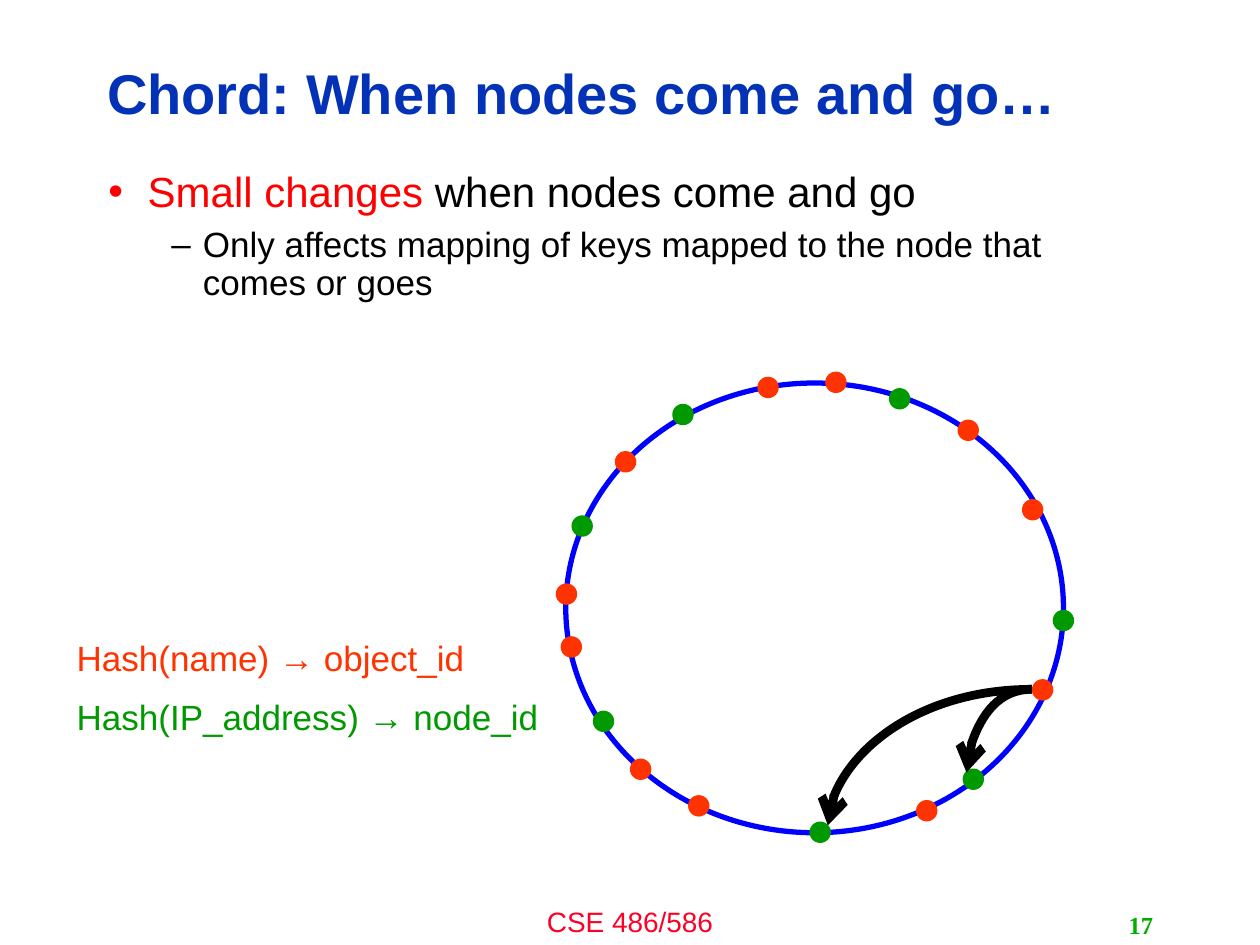
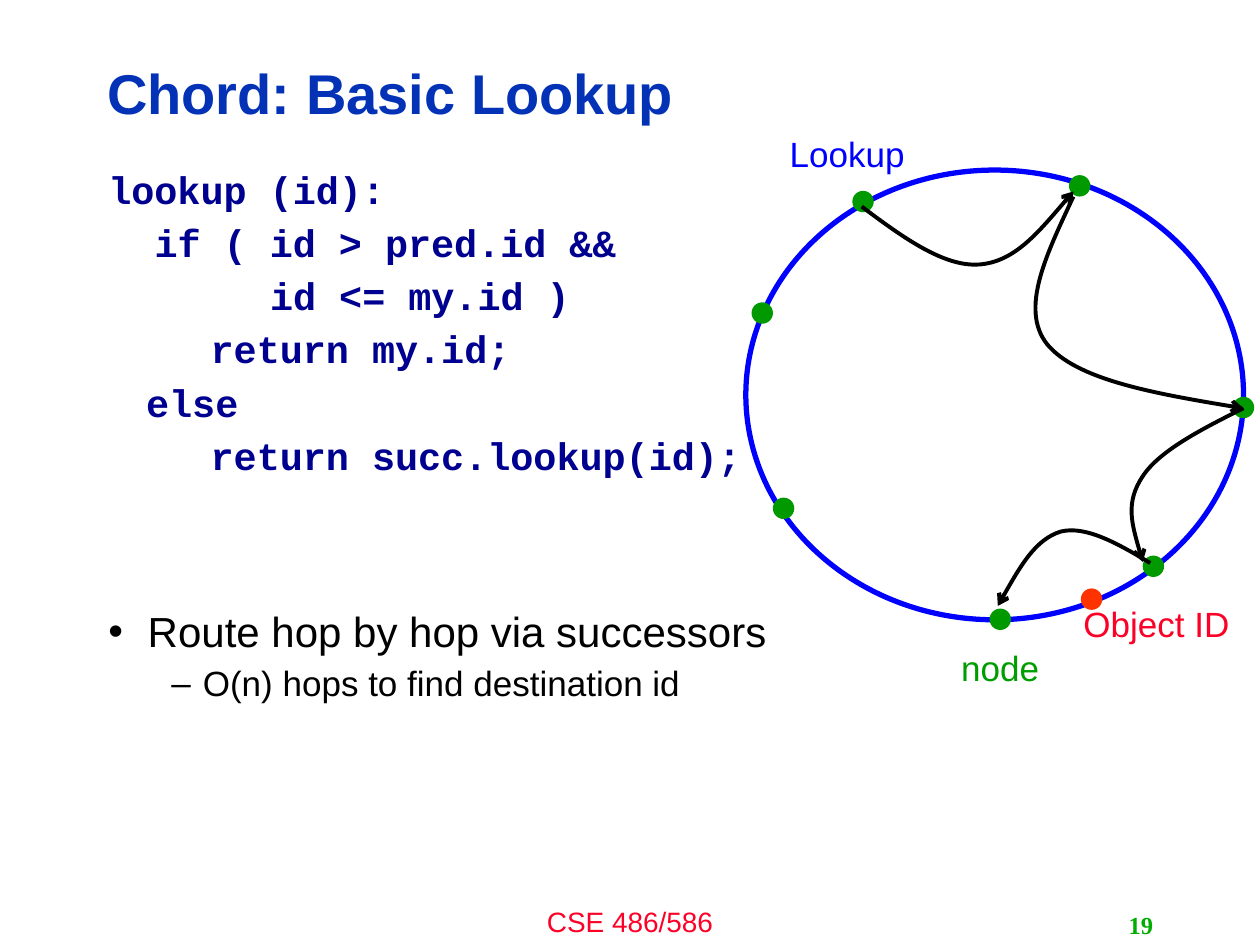
from dataclasses import dataclass

from lxml import etree
from pptx import Presentation, util as u
from pptx.dml.color import RGBColor
from pptx.enum import shapes, text
from pptx.oxml.ns import qn


@dataclass(frozen=True)
class Theme:
    sans: str = "Arial"
    mono: str = "Courier New"
    serif: str = "Times New Roman"
    title: str = "0332B7"
    ink: str = "000000"
    accent: str = "FF0000"
    code: str = "000090"
    course: str = "FC0128"
    number: str = "00AE00"
    ring: str = "0000FF"
    object: str = "FF3300"
    node: str = "009900"
    node_label: str = "009D00"
    title_size: int = 32
    point_size: int = 24
    code_size: int = 22
    label_size: int = 20
    course_size: int = 16
    number_size: int = 14


THEME = Theme()
ALIGN = text.PP_ALIGN
TITLE_BOX = (54, 26, 574.5, 58)
BODY_BOX = (54.7, 94.3, 605, 388)
FOOTER_BOX = (240, 513.4, 240, 26.6)
NUMBER_BOX = (516.2, 517, 149.8, 23)
RING_SIZE = (284.4, 257)
DOT = 12.24
CODE_CHAR = 13.2

NODES = [(284.4, 135.7), (9.4, 81.7), (232.9, 226.4), (67, 18),
         (21.6, 193.3), (145.4, 256.7), (190.8, 9)]
OBJECTS = [(230, 27), (206.3, 244.4), (76, 241.6), (266.8, 72.4),
           (272.5, 175.3), (154.4, -0.4), (115.6, 2.5), (34.2, 45),
           (0.4, 120.6), (3.2, 150.8), (42.8, 220.7)]
LOOKED_UP = (197.6, 245.2)

REMAP_START = (266.4, 175)
REMAP_ENDS = [(229, 222.5), (149.8, 252.7)]

HOPS = [
    [(226.8, 223.9), (221.8, 206.6), (216.7, 190.1), (226.8, 175),
     (236.2, 160.6), (259.9, 148.3), (284.4, 136.1)],
    [(284.4, 136.1), (236.2, 128.2), (188.6, 119.5), (172.1, 99.4),
     (156.2, 79.2), (172.1, 47.5), (187.2, 15.1)],
    [(187.2, 12.2), (169.9, 32.4), (153.4, 52.6), (133.2, 54),
     (113, 55.4), (89.3, 38.2), (66.2, 20.9)],
    [(144, 249.1), (154.8, 229.7), (165.6, 211), (180, 206.6),
     (194.4, 203), (213.1, 213.8), (231.1, 224.6)],
]

CODE = [
    ("lookup (id):", 0),
    ("if ( id > pred.id &&", 2 * CODE_CHAR),
    ("id <= my.id )", 7 * CODE_CHAR),
    ("return my.id;", 58.5),
    ("else", 21.6),
    ("return succ.lookup(id);", 58.5),
]


def points(*lengths):
    return [u.Pt(length) for length in lengths]


def rgb(color):
    return RGBColor.from_string(color)


def write(frame, content, *, size, color=THEME.ink, font=THEME.sans, bold=False,
          align=ALIGN.LEFT, spacing=None, before=0, gap=None, level=0,
          margin=0, indent=0, bullet=None):
    paragraph = frame.paragraphs[0] if not frame.text else frame.add_paragraph()
    paragraph.alignment = align
    paragraph.level = level
    paragraph.line_spacing = spacing
    paragraph.space_before = u.Pt(gap or 0)
    properties = paragraph._p.get_or_add_pPr()
    if before and gap is None:
        space = properties.find(qn("a:spcBef"))
        space.remove(space[0])
        etree.SubElement(space, qn("a:spcPct"), val=str(before * 1000))
    properties.set("marL", str(u.Pt(margin)))
    properties.set("indent", str(u.Pt(indent)))
    if bullet:
        etree.SubElement(properties, qn("a:buChar"), char=bullet)
    else:
        etree.SubElement(properties, qn("a:buNone"))
    parts = [(content, color)] if isinstance(content, str) else content
    for words, tint in parts:
        run = paragraph.add_run()
        run.text = words
        run.font.name = font
        run.font.size = u.Pt(size)
        run.font.bold = bold
        run.font.color.rgb = rgb(tint)


def place(holder, box, anchor):
    holder.left, holder.top, holder.width, holder.height = points(*box)
    frame = holder.text_frame
    frame.word_wrap = True
    frame.auto_size = text.MSO_AUTO_SIZE.NONE
    frame.vertical_anchor = anchor
    return frame


def text_area(slide, box, wrap=False, anchor=text.MSO_ANCHOR.TOP):
    frame = place(slide.shapes.add_textbox(*points(*box)), box, anchor)
    frame.word_wrap = wrap
    return frame


def label(slide, box, words, color):
    write(text_area(slide, box), words, size=THEME.label_size, color=color, before=50)


def write_point(frame, content, gap=None):
    write(frame, content, size=THEME.point_size, spacing=0.9, before=30, gap=gap,
          margin=22.5, indent=-22.5, bullet="•")


def write_detail(frame, content):
    write(frame, content, size=THEME.label_size, spacing=0.9, before=30, level=1,
          margin=54, indent=-18, bullet="–")


def start_slide(deck, heading, number):
    slide = deck.slides.add_slide(deck.slide_layouts[1])
    write(text_area(slide, FOOTER_BOX, wrap=True), "CSE 486/586",
          size=THEME.course_size, color=THEME.course, align=ALIGN.CENTER, before=50)
    title = place(slide.shapes.title, TITLE_BOX, text.MSO_ANCHOR.MIDDLE)
    write(title, heading, size=THEME.title_size, color=THEME.title, bold=True, spacing=0.9)
    write(text_area(slide, NUMBER_BOX, wrap=True, anchor=text.MSO_ANCHOR.MIDDLE), number,
          size=THEME.number_size, color=THEME.number, font=THEME.serif, bold=True,
          align=ALIGN.RIGHT)
    return slide, place(slide.placeholders[1], BODY_BOX, text.MSO_ANCHOR.TOP)


def ellipse(slide, box, fill=None, outline=None):
    oval = slide.shapes.add_shape(shapes.MSO_SHAPE.OVAL, *points(*box))
    oval.shadow.inherit = False
    if fill:
        oval.fill.solid()
        oval.fill.fore_color.rgb = rgb(fill)
    else:
        oval.fill.background()
    if outline:
        oval.line.color.rgb = rgb(outline)
        oval.line.width = u.Pt(3)
    else:
        oval.line.fill.background()


def draw_ring(slide, box, objects):
    left, top = box[:2]
    ellipse(slide, box, outline=THEME.ring)
    for centers, color in ((objects, THEME.object), (NODES, THEME.node)):
        for x, y in centers:
            ellipse(slide, (left + x - DOT / 2, top + y - DOT / 2, DOT, DOT), fill=color)


def style_arrow(arrow, width, end):
    arrow.line.color.rgb = rgb(THEME.ink)
    arrow.line.width = u.Pt(width)
    etree.SubElement(arrow.line._get_or_add_ln(), qn(end), type="arrow")


def draw_remaps(slide, box):
    left, top = box[:2]
    start_x, start_y = REMAP_START
    for x, y in REMAP_ENDS:
        remap = slide.shapes.add_connector(
            shapes.MSO_CONNECTOR.CURVE,
            *points(left + start_x, top + start_y, left + x, top + y))
        remap._element.spPr.find(qn("a:prstGeom")).set("prst", "curvedConnector2")
        style_arrow(remap, 5, "a:tailEnd")
        etree.SubElement(remap._element.spPr, qn("a:effectLst"))


def draw_hops(slide, box):
    left, top = box[:2]
    for hop in HOPS:
        start, *rest = [points(left + x, top + y) for x, y in hop]
        builder = slide.shapes.build_freeform(*start)
        builder.add_line_segments(rest, close=False)
        curve = builder.convert_to_shape()
        segments = curve._element.xpath(".//a:lnTo")
        for first in range(0, len(segments), 3):
            bend = etree.SubElement(segments[first].getparent(), qn("a:cubicBezTo"))
            for segment in segments[first:first + 3]:
                bend.append(segment[0])
                segment.getparent().remove(segment)
        curve.fill.background()
        curve.shadow.inherit = False
        style_arrow(curve, 2.25, "a:headEnd")


def build_churn_slide(deck):
    slide, body = start_slide(deck, "Chord: When nodes come and go…", "17")
    write_point(body, [("Small changes", THEME.accent),
                       (" when nodes come and go", THEME.ink)])
    write_detail(body, "Only affects mapping of keys mapped to the node that comes or goes")
    ring_box = (323.3, 218.9, *RING_SIZE)
    draw_ring(slide, ring_box, OBJECTS)
    hashes = text_area(slide, (36.7, 360, 280, 67.7))
    for rule, color in (("Hash(name) → object_id", THEME.object),
                        ("Hash(IP_address) → node_id", THEME.node)):
        write(hashes, rule, size=THEME.label_size, color=color, before=50)
    draw_remaps(slide, ring_box)


def build_lookup_slide(deck):
    slide, body = start_slide(deck, "Chord: Basic Lookup", "19")
    for line, margin in CODE:
        write(body, line, size=THEME.code_size, color=THEME.code, font=THEME.mono,
              bold=True, spacing=0.9, before=30, margin=margin)
    write_point(body, "Route hop by hop via successors", gap=75.6)
    write_detail(body, "O(n) hops to find destination id")
    ring_box = (426.2, 97.2, *RING_SIZE)
    draw_ring(slide, ring_box, [LOOKED_UP])
    draw_hops(slide, ring_box)
    left, top = ring_box[:2]
    label(slide, (left + 116, top + 268.6, 59.8, 31.7), "node", THEME.node_label)
    label(slide, (left + 18, top - 25.2, 80.6, 31.7), "Lookup", THEME.ring)
    label(slide, (left + 185.8, top + 243.4, 98.6, 31.7), "Object ID", THEME.course)


def main():
    deck = Presentation()
    deck.slide_width, deck.slide_height = points(720, 540)
    build_churn_slide(deck)
    build_lookup_slide(deck)
    deck.save("out.pptx")


if __name__ == "__main__":
    main()
